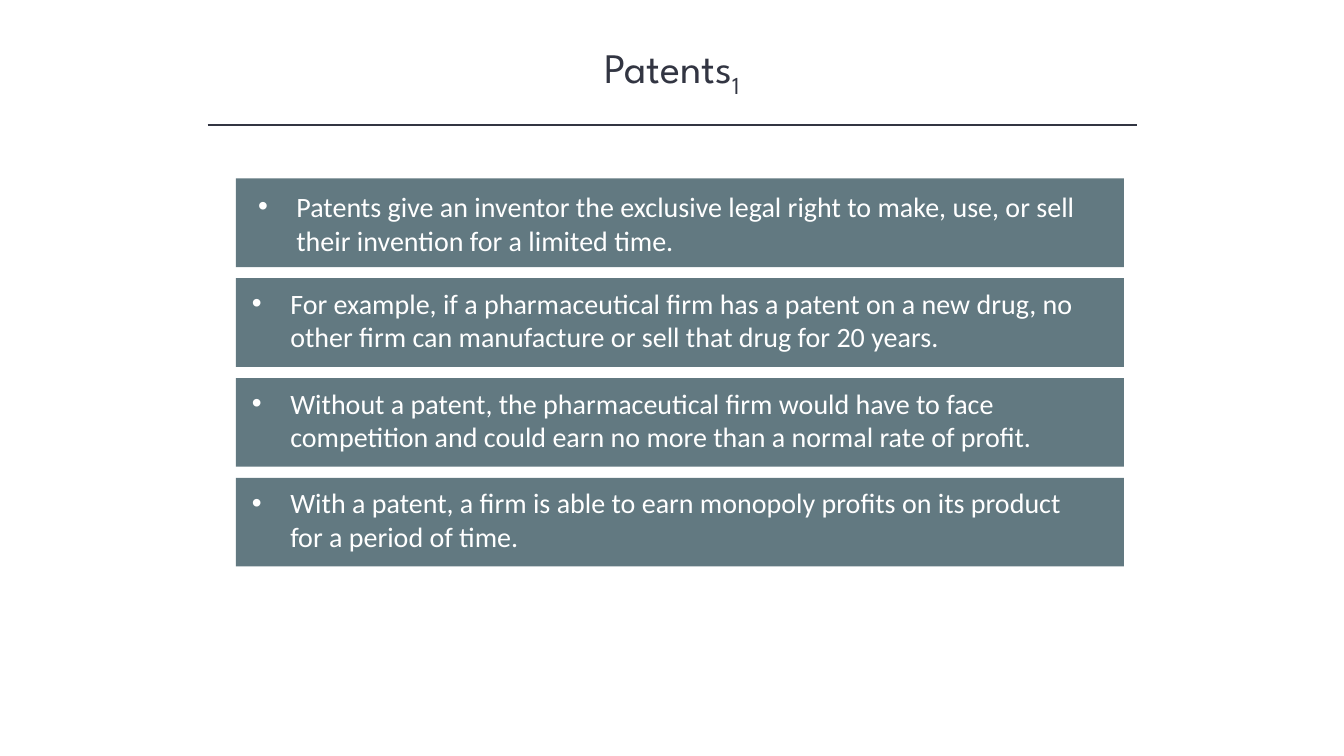
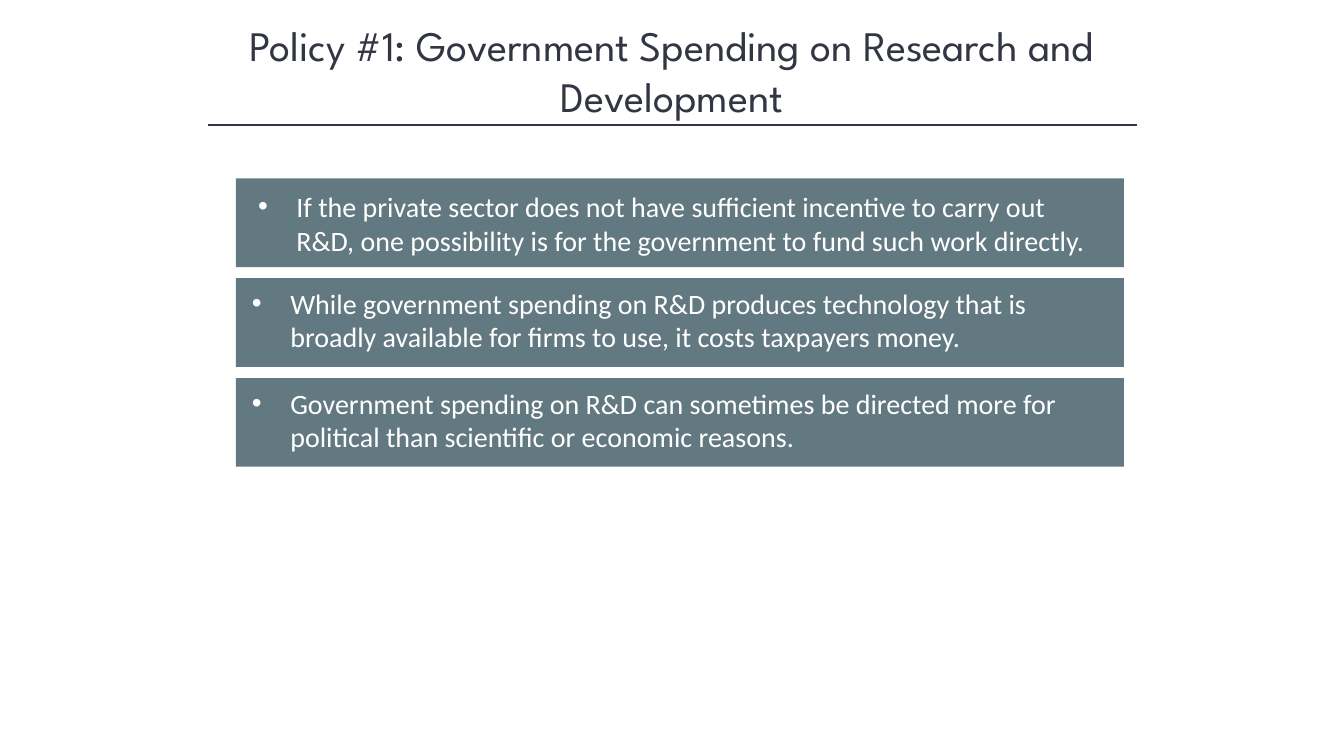
from pptx import Presentation, util as u
from pptx.dml.color import RGBColor
from pptx.enum import shapes, text
from pptx.oxml.ns import qn
from lxml import etree

INK = RGBColor(0x32, 0x35, 0x42)
SLATE = RGBColor(0x62, 0x79, 0x81)
WHITE = RGBColor(0xFF, 0xFF, 0xFF)
HEAD, BODY = "League Spartan", "Calibri"
COLS, ROWS = 40, 30
COL, ROW = u.Inches(1) // 3, u.Inches(0.25)
HANG = u.Inches(0.38)

DECK = [
    ("Patents", "1", [
        "Patents give an inventor the exclusive legal right to make, use, or sell their invention for a limited time.",
        "For example, if a pharmaceutical firm has a patent on a new drug, no other firm can manufacture or sell that drug for 20 years.",
        "Without a patent, the pharmaceutical firm would have to face competition and could earn no more than a normal rate of profit.",
        "With a patent, a firm is able to earn monopoly profits on its product for a period of time.",
    ]),
    ("Policy #1: Government Spending on Research and Development", "", [
        "If the private sector does not have sufficient incentive to carry out R&D, one possibility is for the government to fund such work directly.",
        "While government spending on R&D produces technology that is broadly available for firms to use, it costs taxpayers money.",
        "Government spending on R&D can sometimes be directed more for political than scientific or economic reasons.",
    ]),
]


def grid(x, y, w, h):
    """Turn columns and rows into slide lengths."""
    return [round(n) for n in (x * COL, y * ROW, w * COL, h * ROW)]


class Deck:
    def __init__(self):
        self.prs = Presentation()
        self.prs.slide_width, self.prs.slide_height = COLS * COL, ROWS * ROW

    def add(self, title, sub, points):
        self.slide = self.prs.slides.add_slide(self.prs.slide_layouts[6])
        self.title(title, sub)
        self.rule()
        for i, point in enumerate(points):
            self.bar(i, point)

    def style(self, font, face, size, color):
        font.name, font.size = face, u.Pt(size)
        font.color.rgb = color

    def title(self, title, sub):
        """Write a centred title, with an optional subscript number."""
        frame = self.slide.shapes.add_textbox(*grid(5, 0.57, 30, 4.44)).text_frame
        frame.word_wrap = True
        frame.vertical_anchor = text.MSO_ANCHOR.MIDDLE
        frame.text = title
        para = frame.paragraphs[0]
        para.alignment = text.PP_ALIGN.CENTER
        if sub:
            run = para.add_run()
            run.text = sub
            run._r.get_or_add_rPr().set("baseline", "-25000")
        for run in para.runs:
            self.style(run.font, HEAD, 30, INK)

    def rule(self):
        x, y, w, h = grid(6.18, 4.96, 27.66, 0)
        line = self.slide.shapes.add_connector(
            shapes.MSO_CONNECTOR.STRAIGHT, x, y, x + w, y + h)
        line.line.color.rgb = INK
        line.line.width = u.Pt(1)
        etree.SubElement(line._element.spPr, qn("a:effectLst"))

    def bar(self, i, point):
        """Draw the i-th filled bar; the first sets its text slightly further in."""
        box = self.slide.shapes.add_shape(
            shapes.MSO_SHAPE.RECTANGLE, *grid(7.02, 7.08 + 3.96 * i, 26.43, 3.52))
        box.shadow.inherit = False
        box.fill.solid()
        box.fill.fore_color.rgb = SLATE
        box.line.fill.background()
        left, top = (0.22, 0.11) if i == 0 else (0.16, 0.08)
        frame = box.text_frame
        frame.word_wrap = True
        frame.vertical_anchor = text.MSO_ANCHOR.TOP
        frame.margin_left, frame.margin_top = u.Inches(left), u.Inches(top)
        frame.margin_right, frame.margin_bottom = u.Inches(0.47 - left), 0
        frame.text = point
        para = frame.paragraphs[0]
        para.alignment = text.PP_ALIGN.LEFT
        props = para._p.get_or_add_pPr()
        props.set("marL", str(HANG))
        props.set("indent", str(-HANG))
        etree.SubElement(props, qn("a:buFont"), typeface="Arial")
        etree.SubElement(props, qn("a:buChar"), char="•")
        self.style(para.runs[0].font, BODY, 20, WHITE)


def main():
    deck = Deck()
    for title, sub, points in DECK:
        deck.add(title, sub, points)
    deck.prs.save("out.pptx")


if __name__ == "__main__":
    main()
